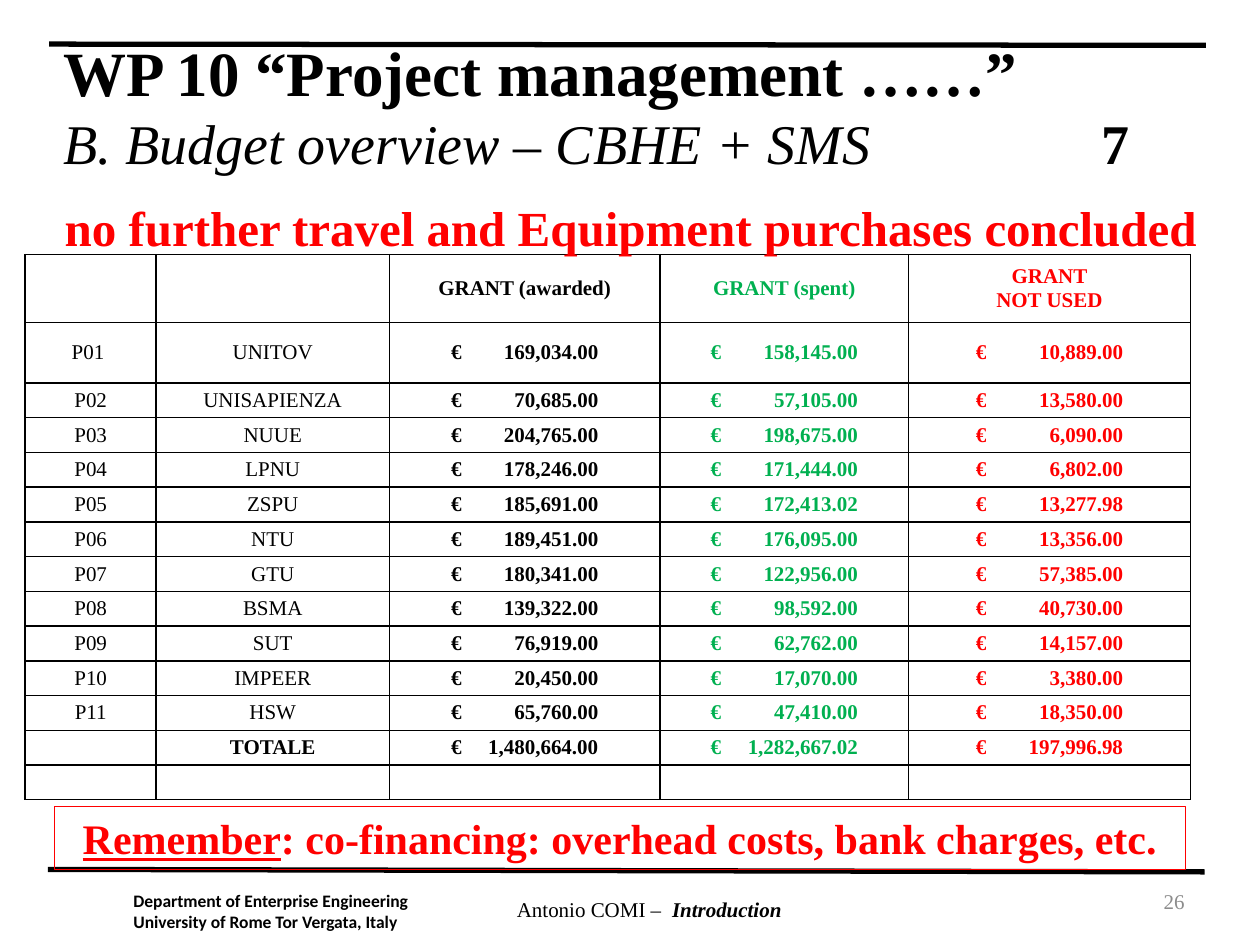
import lxml.etree
import pptx
import pptx.dml.color
import pptx.enum.shapes
import pptx.enum.text
import pptx.oxml.ns
import pptx.util

COLORS = {"black": "000000", "white": "FFFFFF", "green": "00B050", "red": "FF0000", "gray": "8C8C8C"}
SERIF = "Times New Roman"
ALIGN = pptx.enum.text.PP_ALIGN
ANCHOR = pptx.enum.text.MSO_ANCHOR
UNIT = pptx.util.Inches(0.1)
COLUMN_SHARES = (10.4, 18.5, 21.5, 19.7, 22.4)
AMOUNT_WIDTH = 11.7
HEADERS = (
    ("", "black"), ("", "black"), ("GRANT (awarded)", "black"),
    ("GRANT (spent)", "green"), ("GRANT\vNOT USED", "red"),
)
PARTNERS = (
    ("P01 ", "UNITOV", 169034, 158145),
    ("P02", "UNISAPIENZA", 70685, 57105),
    ("P03", "NUUE", 204765, 198675),
    ("P04", "LPNU", 178246, 171444),
    ("P05", "ZSPU", 185691, 172413.02),
    ("P06", "NTU", 189451, 176095),
    ("P07", "GTU", 180341, 122956),
    ("P08", "BSMA", 139322, 98592),
    ("P09", "SUT", 76919, 62762),
    ("P10", "IMPEER", 20450, 17070),
    ("P11", "HSW", 65760, 47410),
)


def grid(*cells):
    """Turn grid columns and rows into slide lengths."""
    return [round(cell * UNIT) for cell in cells]


def rgb(name):
    """Return the named colour."""
    return pptx.dml.color.RGBColor.from_string(COLORS[name])


def add_element(parent, tag, **attributes):
    """Append a DrawingML element to its parent."""
    return lxml.etree.SubElement(parent, pptx.oxml.ns.qn(tag), attributes)


def add_run(paragraph, text, size, color="black", font=SERIF, bold=False, italic=False, underline=False):
    """Add one formatted run, turning vertical tabs into line breaks."""
    for index, line in enumerate(text.split("\v")):
        if index:
            paragraph.add_line_break()
        run = paragraph.add_run()
        run.text = line
        run.font.size = pptx.util.Pt(size)
        run.font.name = font
        run.font.bold = bold
        run.font.italic = italic
        run.font.underline = underline
        run.font.color.rgb = rgb(color)


def add_tab(paragraph, position, side):
    """Set the single tab stop of a paragraph."""
    tabs = add_element(paragraph._p.get_or_add_pPr(), "a:tabLst")
    add_element(tabs, "a:tab", pos=str(position), algn=side)


def add_rule(slide, box):
    """Draw a heavy horizontal rule from one corner of the box to the other."""
    left, top, width, height = box
    rule = slide.shapes.add_connector(
        pptx.enum.shapes.MSO_CONNECTOR.STRAIGHT, left, top, left + width, top + height)
    rule.line.color.rgb = rgb("black")
    rule.line.width = pptx.util.Pt(3)
    add_element(rule._element.spPr, "a:effectLst")


def add_text(slide, box, align=ALIGN.LEFT, anchor=ANCHOR.TOP):
    """Add a wrapping text box and return its frame."""
    frame = slide.shapes.add_textbox(*box).text_frame
    frame.word_wrap = True
    frame.vertical_anchor = anchor
    frame.paragraphs[0].alignment = align
    return frame


def add_footer(slide, box):
    """Place department, speaker and page number along the footer."""
    left, top, width, height = box
    department = add_text(slide, (left, top + round(height * 0.18), round(width * 0.31), round(height * 0.53)))
    department.margin_left = department.margin_right = 0
    department.margin_top = department.margin_bottom = 0
    add_run(department.paragraphs[0], "Department of Enterprise Engineering", 10, font="Calibri", bold=True)
    add_run(department.add_paragraph(), "University of Rome Tor Vergata, Italy", 10, font="Calibri", bold=True)
    speaker_box = (left + round(width * 0.25), top + round(height * 0.19), round(width * 0.47), round(height * 0.81))
    speaker = add_text(slide, speaker_box, ALIGN.CENTER).paragraphs[0]
    add_run(speaker, "Antonio COMI –  ", 12)
    add_run(speaker, "Introduction", 12, bold=True, italic=True)
    number_box = (left + round(width * 0.72), top, round(width * 0.28), round(height * 0.65))
    number = add_text(slide, number_box, ALIGN.RIGHT, ANCHOR.MIDDLE).paragraphs[0]
    add_run(number, "26", 12, "gray")


def fill_title(slide, box):
    """Move the title placeholder and write the two title lines."""
    title = slide.shapes.title
    title.left, title.top, title.width, title.height = box
    frame = title.text_frame
    frame.auto_size = pptx.enum.text.MSO_AUTO_SIZE.NONE
    frame.vertical_anchor = ANCHOR.MIDDLE
    paragraph = frame.paragraphs[0]
    paragraph.alignment = ALIGN.LEFT
    add_tab(paragraph, round(box[2] * 0.9), "l")
    add_run(paragraph, "WP 10 “Project management ……”", 36, bold=True)
    paragraph.add_line_break()
    add_run(paragraph, "B. Budget overview – CBHE + SMS\t", 32, italic=True)
    add_run(paragraph, "7", 32, bold=True)


def format_cell(cell):
    """Give a cell black borders, a white fill and no margins."""
    cell.margin_left = cell.margin_right = cell.margin_top = cell.margin_bottom = 0
    cell.vertical_anchor = ANCHOR.MIDDLE
    properties = cell._tc.get_or_add_tcPr()
    for side in ("a:lnL", "a:lnR", "a:lnT", "a:lnB"):
        border = add_element(properties, side, w=str(pptx.util.Pt(1)))
        add_element(add_element(border, "a:solidFill"), "a:srgbClr", val=COLORS["black"])
    cell.fill.solid()
    cell.fill.fore_color.rgb = rgb("white")


def write_label(cell, text, color="black", bold=False):
    """Write a centred label, or keep an empty cell at the table's text size."""
    paragraph = cell.text_frame.paragraphs[0]
    paragraph.alignment = ALIGN.CENTER
    if text:
        add_run(paragraph, text, 12, color, bold=bold)
    else:
        add_element(paragraph._p, "a:endParaRPr", sz="1200")


def write_amount(cell, column_width, amount, color):
    """Write the euro sign and amount at the two edges of a centred band."""
    band = round(AMOUNT_WIDTH * UNIT)
    cell.margin_left = (column_width - band) // 2
    paragraph = cell.text_frame.paragraphs[0]
    add_tab(paragraph, band, "r")
    add_run(paragraph, f"€\t{amount:,.2f}", 12, color, bold=True)


def add_budget_table(slide, box):
    """Build the grant table with computed balances and totals."""
    total = ("", "TOTALE", sum(row[2] for row in PARTNERS), sum(row[3] for row in PARTNERS))
    records = PARTNERS + (total,)
    table = slide.shapes.add_table(len(records) + 2, len(HEADERS), *box).table
    table.first_row = table.horz_banding = False
    for column, share in zip(table.columns, COLUMN_SHARES):
        column.width = round(box[2] * share / sum(COLUMN_SHARES))
    heights = grid(5.4, 4.8)
    regular = (box[3] - sum(heights)) // len(records)
    for index, row in enumerate(table.rows):
        row.height = heights[index] if index < len(heights) else regular
    for cell in table.iter_cells():
        format_cell(cell)
    for column, (text, color) in enumerate(HEADERS):
        write_label(table.cell(0, column), text, color, True)
        write_label(table.cell(len(records) + 1, column), "")
    for row, (code, partner, awarded, spent) in enumerate(records, 1):
        write_label(table.cell(row, 0), code)
        write_label(table.cell(row, 1), partner, bold=partner == "TOTALE")
        for column, amount in enumerate((awarded, spent, awarded - spent), 2):
            write_amount(table.cell(row, column), table.columns[column].width, amount, HEADERS[column][1])


def add_reminder(slide, box):
    """Draw the outlined reminder under the table."""
    reminder = slide.shapes.add_shape(pptx.enum.shapes.MSO_SHAPE.RECTANGLE, *box)
    reminder.shadow.inherit = False
    reminder.fill.background()
    reminder.line.color.rgb = rgb("red")
    reminder.line.width = pptx.util.Pt(0.75)
    paragraph = reminder.text_frame.paragraphs[0]
    paragraph.alignment = ALIGN.CENTER
    add_run(paragraph, "Remember", 24, "red", bold=True, underline=True)
    add_run(paragraph, ": co-financing: overhead costs, bank charges, etc.", 24, "red", bold=True)


def main():
    """Build and save the budget overview slide."""
    presentation = pptx.Presentation()
    presentation.slide_width, presentation.slide_height = grid(100, 75)
    slide = presentation.slides.add_slide(presentation.slide_layouts[5])
    add_rule(slide, grid(3.8, 69, 91.8, 0.2))
    add_rule(slide, grid(3.9, 3.5, 91.8, 0.1))
    add_footer(slide, grid(10.6, 69.5, 84.4, 6.2))
    fill_title(slide, grid(4, 4.3, 91.6, 8))
    add_budget_table(slide, grid(2, 20.2, 92.5, 43.3))
    notice = add_text(slide, grid(2, 15.2, 96.1, 5.7), ALIGN.CENTER).paragraphs[0]
    add_run(notice, "no further travel and Equipment purchases concluded", 28, "red", bold=True)
    add_reminder(slide, grid(4.3, 64, 89.8, 5))
    presentation.save("out.pptx")


if __name__ == "__main__":
    main()
